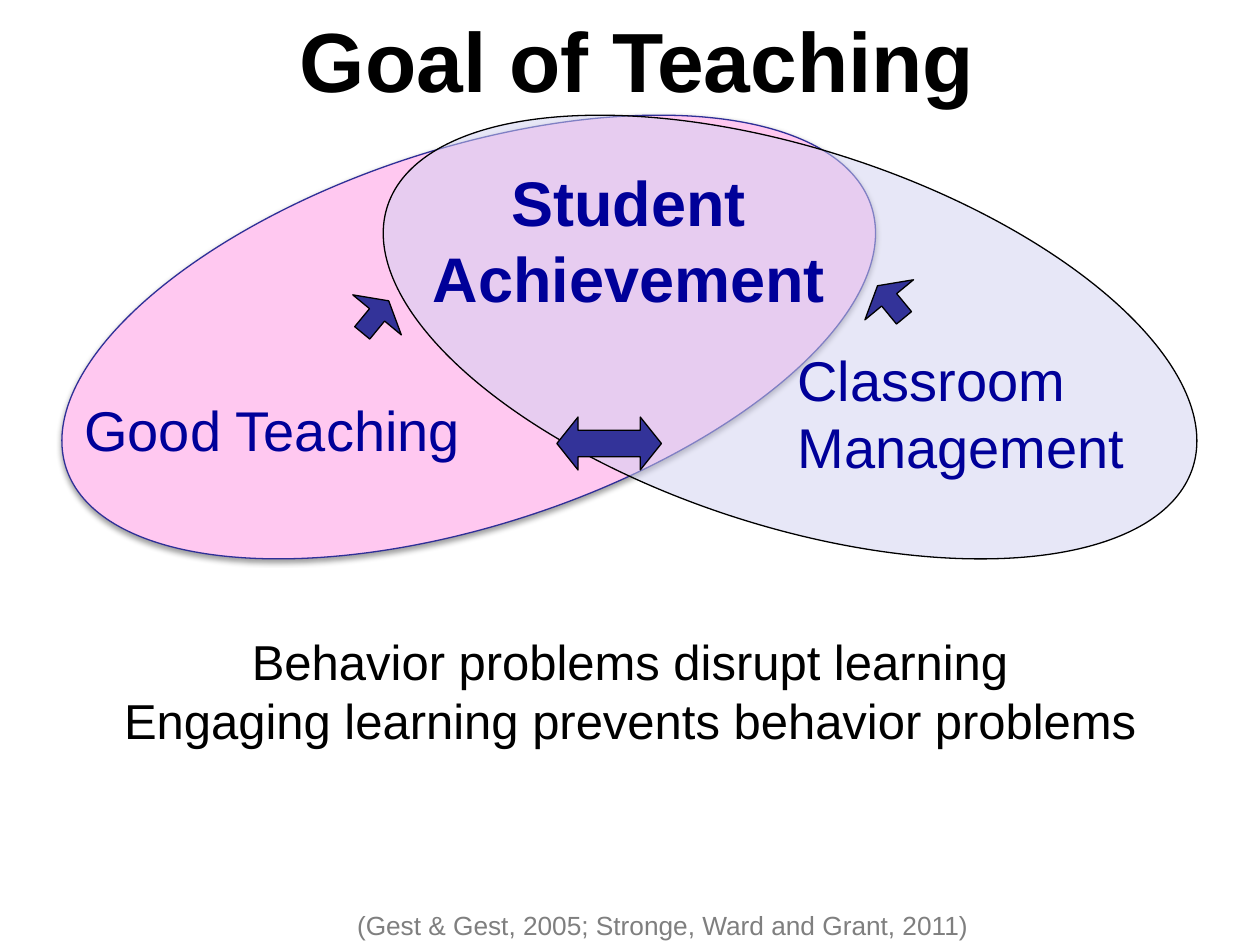
from lxml import etree
from pptx import Presentation
from pptx.dml.color import RGBColor
from pptx.enum.shapes import MSO_SHAPE
from pptx.enum.text import MSO_ANCHOR, MSO_AUTO_SIZE, PP_ALIGN
from pptx.oxml.ns import qn
from pptx.util import Inches, Pt

OVAL = MSO_SHAPE.OVAL
UP_ARROW = MSO_SHAPE.UP_ARROW
DOUBLE_ARROW = MSO_SHAPE.LEFT_RIGHT_ARROW
LEFT, CENTER = PP_ALIGN.LEFT, PP_ALIGN.CENTER
TOP, MIDDLE = MSO_ANCHOR.TOP, MSO_ANCHOR.MIDDLE
FIT_SHAPE = MSO_AUTO_SIZE.SHAPE_TO_FIT_TEXT

BLACK, NAVY, GRAY = "000000", "000099", "7F7F7F"
PINK, LAVENDER, ARROW_BLUE, OUTLINE_BLUE = "FFC8F0", "D1D1F0", "333399", "2F2F98"


def color(hex_string):
    return RGBColor.from_string(hex_string)


def inches(box):
    return [Inches(value) for value in box]


def add_text(slide, box, text, size, hex_color, align=CENTER, bold=False, anchor=TOP):
    shape = slide.shapes.add_textbox(*inches(box))
    frame = shape.text_frame
    frame.word_wrap = True
    frame.vertical_anchor = anchor
    if anchor == TOP:
        frame.auto_size = FIT_SHAPE
    paragraph = frame.paragraphs[0]
    paragraph.text = text
    paragraph.alignment = align
    font = paragraph.font
    font.name, font.size, font.bold = "Arial", Pt(size), bold
    font.color.rgb = color(hex_color)


def add_outlined(slide, kind, box, fill, line=BLACK, rotation=0, adjustments=()):
    shape = slide.shapes.add_shape(kind, *inches(box))
    shape.shadow.inherit = False
    shape.fill.solid()
    shape.fill.fore_color.rgb = color(fill)
    shape.line.color.rgb = color(line)
    shape.line.width = Pt(0.75)
    shape.rotation = rotation
    for index, value in enumerate(adjustments):
        shape.adjustments[index] = value
    return shape


def set_alpha(color_element, percent):
    etree.SubElement(color_element, qn("a:alpha"), val=str(percent * 1000))


def add_soft_shadow(shape):
    effects = shape._element.spPr.find(qn("a:effectLst"))
    shadow = etree.SubElement(effects, qn("a:outerShdw"), blurRad=str(Pt(3.1)),
                              dist=str(Pt(1.6)), dir="5400000", rotWithShape="0")
    set_alpha(etree.SubElement(shadow, qn("a:srgbClr"), val=BLACK), 38)


def add_venn(slide, box):
    left, top, width, height = box
    oval_width = 6.72
    tilt = 18

    # Overlapping ovals, mirrored about the middle
    teaching = add_outlined(slide, OVAL, (left, top, oval_width, height),
                            PINK, OUTLINE_BLUE, -tilt)
    add_soft_shadow(teaching)
    management = add_outlined(slide, OVAL, (left + width - oval_width, top, oval_width, height),
                              LAVENDER, rotation=tilt)
    set_alpha(management._element.spPr.find(qn("a:solidFill"))[0], 50)

    # Labels
    add_text(slide, (left + 0.21, top + 1.91, 3.25, 0.64), "Good Teaching", 32, NAVY, LEFT)
    add_text(slide, (left + 5.87, top + 1.51, 3.58, 1.18), "Classroom Management",
             32, NAVY, LEFT)
    add_text(slide, (left + 2.67, top + 0.07, 3.92, 1.31), "Student Achievement",
             36, NAVY, bold=True)

    # Arrows towards achievement, and between the two ovals
    for x, y, turn in ((2.37, 1.17, 39.5), (6.46, 1.05, -39.5)):
        add_outlined(slide, UP_ARROW, (left + x, top + y, 0.5, 0.33), ARROW_BLUE,
                     rotation=turn, adjustments=(0.31, 0.44))
    add_outlined(slide, DOUBLE_ARROW, (left + 4.06, top + 2.13, 0.83, 0.42), ARROW_BLUE,
                 adjustments=(0.5, 0.4))


def main():
    presentation = Presentation()
    presentation.slide_width, presentation.slide_height = Inches(10), Inches(7.5)
    slide = presentation.slides.add_slide(presentation.slide_layouts[6])

    add_venn(slide, (0.36, 1.18, 9.27, 2.99))
    # Takeaway, citation and heading
    add_text(slide, (0, 4.99, 10, 0.98),
             "Behavior problems disrupt learning\nEngaging learning prevents behavior problems",
             28, BLACK, anchor=MIDDLE)
    add_text(slide, (1.38, 7.17, 7.76, 0.35),
             "(Gest & Gest, 2005; Stronge, Ward and Grant, 2011)", 15, GRAY)
    add_text(slide, (0.81, 0.02, 8.5, 0.91), "Goal of Teaching", 48, BLACK, bold=True)

    presentation.save("out.pptx")


if __name__ == "__main__":
    main()
